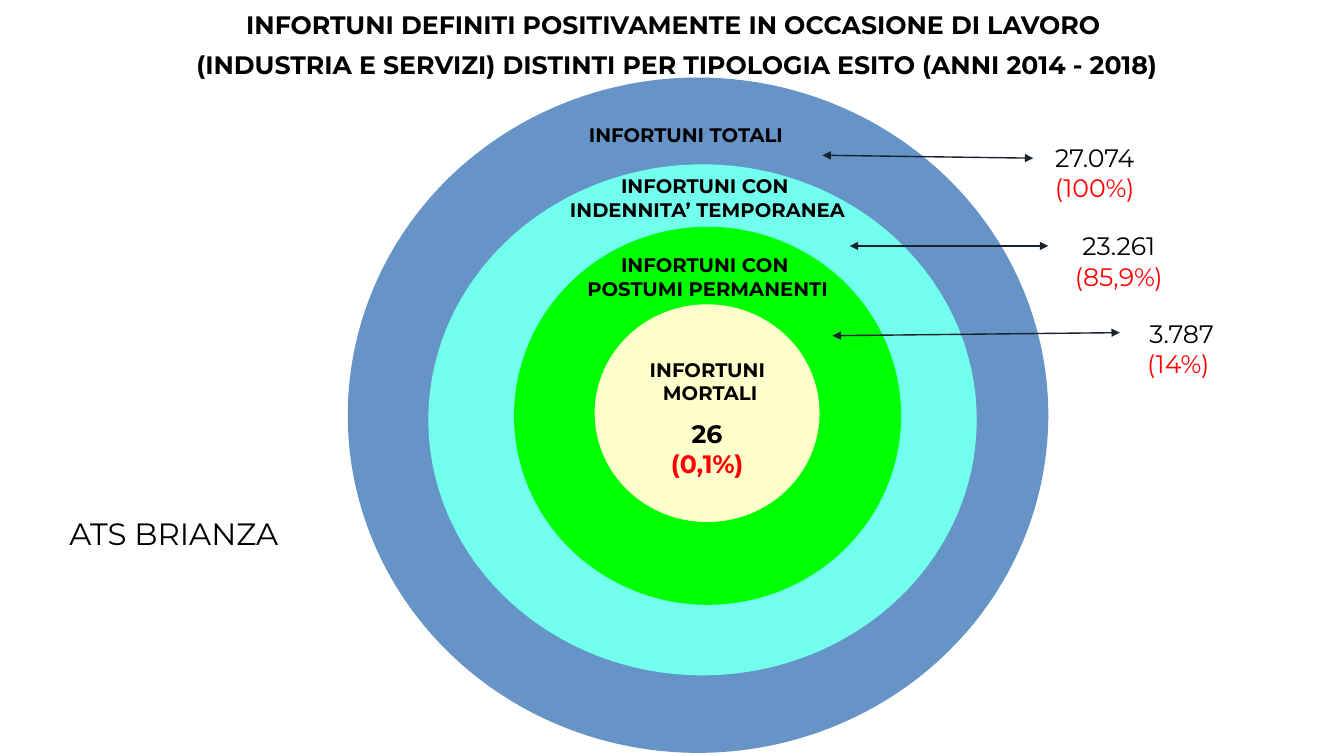
from dataclasses import dataclass

import lxml.etree
import pptx
import pptx.dml.color
import pptx.enum.shapes
import pptx.enum.text
import pptx.oxml.ns
import pptx.util

Pt = pptx.util.Pt
qn = pptx.oxml.ns.qn


@dataclass(frozen=True)
class Theme:
    font: str = "Montserrat"
    ink: str = "000000"
    accent: str = "FF0000"
    arrow: str = "19232F"
    total: str = "004EA3"
    temporary: str = "73FFEE"
    permanent: str = "00FF00"
    fatal: str = "FFFFCC"
    label_size: int = 14
    value_size: int = 18
    place_size: int = 22


THEME = Theme()


@dataclass(frozen=True)
class Box:
    left: float
    top: float
    width: float
    height: float

    def lengths(self) -> list:
        return [Pt(v) for v in (self.left, self.top, self.width, self.height)]


@dataclass(frozen=True)
class Ring:
    box: Box
    color: str
    opacity: int = 100


@dataclass(frozen=True)
class Line:
    text: str
    color: str = THEME.ink


@dataclass(frozen=True)
class Text:
    box: Box
    lines: list[Line]
    size: int
    bold: bool = False
    space_after: float = 0
    grow: bool = True


@dataclass(frozen=True)
class Arrow:
    x1: float
    y1: float
    x2: float
    y2: float


def rgb(color: str) -> pptx.dml.color.RGBColor:
    return pptx.dml.color.RGBColor.from_string(color)


def add_ring(slide, ring: Ring) -> None:
    sp = slide.shapes.add_shape(
        pptx.enum.shapes.MSO_SHAPE.OVAL, *ring.box.lengths())
    sp.shadow.inherit = False
    sp.fill.solid()
    sp.fill.fore_color.rgb = rgb(ring.color)
    sp.line.fill.background()
    if ring.opacity < 100:
        clr = sp.fill._xPr.find(qn("a:solidFill")).find(qn("a:srgbClr"))
        alpha = lxml.etree.SubElement(clr, qn("a:alpha"))
        alpha.set("val", str(ring.opacity * 1000))


def add_text(slide, text: Text) -> None:
    tf = slide.shapes.add_textbox(*text.box.lengths()).text_frame
    tf.word_wrap = True
    if text.grow:
        tf.auto_size = pptx.enum.text.MSO_AUTO_SIZE.SHAPE_TO_FIT_TEXT
    for i, line in enumerate(text.lines):
        p = tf.add_paragraph() if i else tf.paragraphs[0]
        p.alignment = pptx.enum.text.PP_ALIGN.CENTER
        p.space_after = Pt(text.space_after)
        r = p.add_run()
        r.text = line.text
        r.font.name = THEME.font
        r.font.size = Pt(text.size)
        r.font.bold = text.bold
        r.font.color.rgb = rgb(line.color)


def add_arrow(slide, arrow: Arrow) -> None:
    cxn = slide.shapes.add_connector(
        pptx.enum.shapes.MSO_CONNECTOR.STRAIGHT,
        Pt(arrow.x1), Pt(arrow.y1), Pt(arrow.x2), Pt(arrow.y2))
    cxn.line.color.rgb = rgb(THEME.arrow)
    cxn.line.width = Pt(1)
    ln = cxn.line._get_or_add_ln()
    for end in ("a:headEnd", "a:tailEnd"):
        lxml.etree.SubElement(ln, qn(end)).set("type", "triangle")
    lxml.etree.SubElement(cxn._element.spPr, qn("a:effectLst"))


def label(box: Box, *lines: str) -> Text:
    return Text(box, [Line(s) for s in lines], THEME.label_size, bold=True)


def value(box: Box, count: str, share: str, bold: bool = False) -> Text:
    lines = [Line(count), Line(share, THEME.accent)]
    return Text(box, lines, THEME.value_size, bold)


# Concentric rings, outermost first
RINGS = [
    Ring(Box(248.4, 55.4, 500.4, 482.4), THEME.total, opacity=60),
    Ring(Box(306, 117.4, 391.7, 365), THEME.temporary),
    Ring(Box(367.2, 162, 276.5, 270), THEME.permanent),
    Ring(Box(424.8, 217.4, 160.6, 155.5), THEME.fatal),
]

# Arrows from the rings to their values
ARROWS = [
    Arrow(587.5, 110.9, 738, 113),
    Arrow(607, 175.7, 748.8, 175.7),
    Arrow(594.7, 239.8, 799.9, 237.6),
]

TEXTS = [
    # Ring labels
    label(Box(356.4, 84.2, 267.1, 24.5), "INFORTUNI TOTALI"),
    label(Box(367.2, 121, 276.5, 41), "INFORTUNI CON ", "INDENNITA’ TEMPORANEA"),
    label(Box(294.5, 177.1, 421.9, 41), "INFORTUNI CON ", "POSTUMI PERMANENTI"),
    label(Box(378, 252, 258.5, 58.3), "INFORTUNI ", "MORTALI"),
    # Counts and shares
    value(Box(375.8, 295.2, 258.5, 51.1), "26", "(0,1%)", bold=True),
    value(Box(731.5, 97.9, 100.8, 51.1), "27.074", "(100%)"),
    value(Box(748.8, 161.3, 100.8, 51.1), "23.261", "(85,9%)"),
    value(Box(791.3, 223.9, 100.8, 51.1), " 3.787", "(14%)"),
    # Title
    Text(Box(8.6, 2.9, 949.7, 110.9), [
        Line("INFORTUNI DEFINITI POSITIVAMENTE IN OCCASIONE DI LAVORO "),
        Line("(INDUSTRIA E SERVIZI) DISTINTI PER TIPOLOGIA ESITO (ANNI 2014 - 2018)"),
    ], THEME.value_size, bold=True, space_after=7, grow=False),
    # Place
    Text(Box(33.8, 364.3, 180.7, 33.8), [Line("ATS BRIANZA")], THEME.place_size),
]


def main() -> None:
    prs = pptx.Presentation()
    prs.slide_width, prs.slide_height = Pt(960), Pt(540)
    slide = prs.slides.add_slide(prs.slide_layouts[6])
    for ring in RINGS:
        add_ring(slide, ring)
    for arrow in ARROWS:
        add_arrow(slide, arrow)
    for text in TEXTS:
        add_text(slide, text)
    prs.save("out.pptx")


if __name__ == "__main__":
    main()
